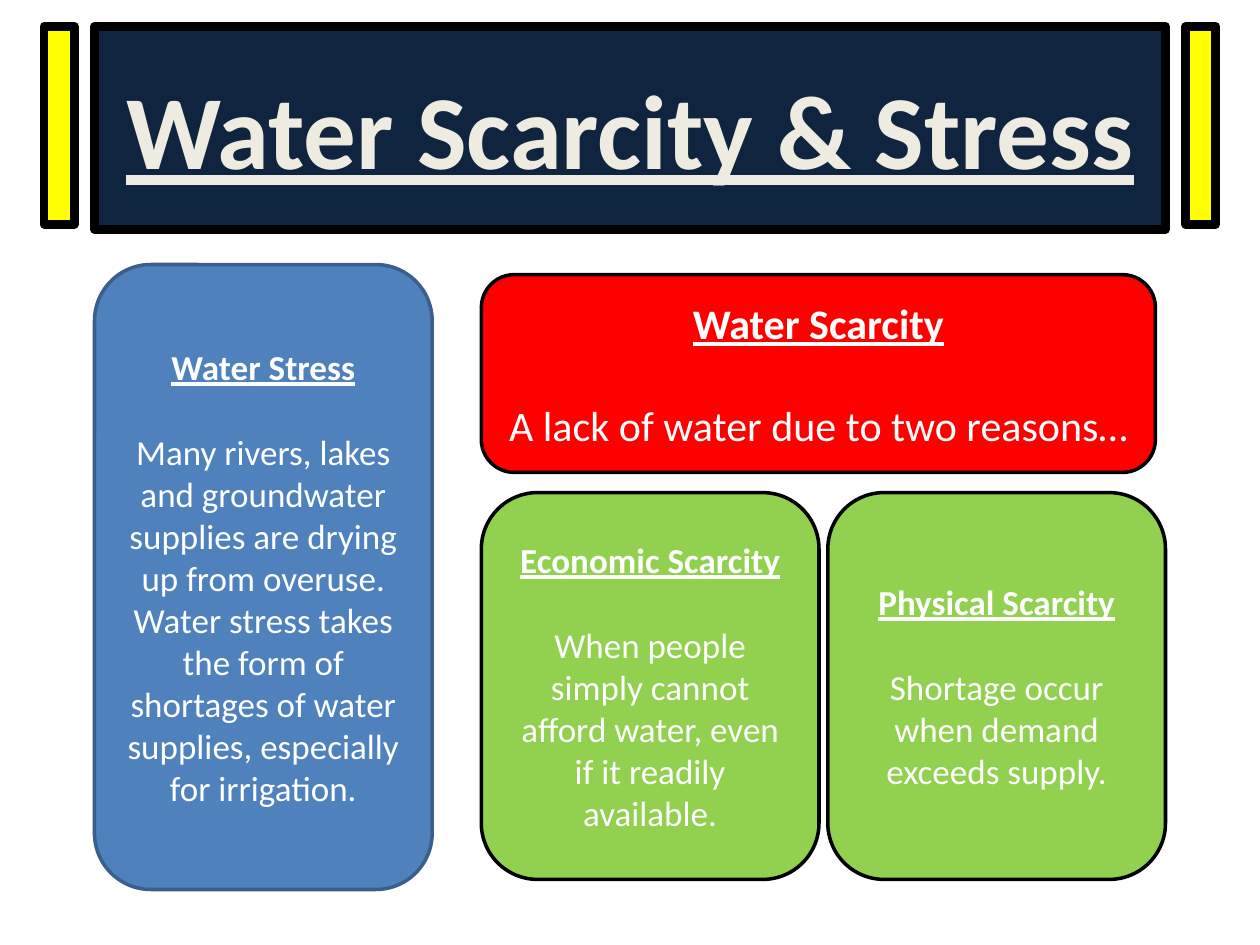
from pptx import Presentation
from pptx import util as u
from pptx.dml.color import RGBColor
from pptx.enum import shapes, text

Inches = u.Inches
NAVY = RGBColor(0x0F, 0x24, 0x3E)
CREAM = RGBColor(0xEE, 0xEC, 0xE1)
YELLOW = RGBColor(0xFF, 0xFF, 0x00)
BLUE = RGBColor(0x4F, 0x81, 0xBD)
STEEL = RGBColor(0x3A, 0x5F, 0x8C)
RED = RGBColor(0xFF, 0x00, 0x00)
GREEN = RGBColor(0x92, 0xD0, 0x50)
BLACK = RGBColor(0, 0, 0)
WHITE = RGBColor(0xFF, 0xFF, 0xFF)
FONT = "Calibri"
LEADING = 1.22


def paint(shape, fill, line, width):
    shape.fill.solid()
    shape.fill.fore_color.rgb = fill
    shape.line.color.rgb = line
    shape.line.width = u.Pt(width)


def style(para, size, color, strong):
    para.alignment = text.PP_ALIGN.CENTER
    for run in para.runs:
        font = run.font
        font.name = FONT
        font.size = u.Pt(size)
        font.color.rgb = color
        font.bold = font.underline = strong


def add_block(slide, kind, box, fill, line, width):
    shape = slide.shapes.add_shape(kind, *map(Inches, box))
    shape.shadow.inherit = False
    paint(shape, fill, line, width)
    return shape


def add_header(slide, box):
    left, top, width, height = box
    title = slide.shapes.title
    title.left, title.top, title.width, title.height = map(Inches, box)
    paint(title, NAVY, BLACK, 5)
    frame = title.text_frame
    frame.text = "Water Scarcity & Stress"
    frame.word_wrap = True
    frame.auto_size = text.MSO_AUTO_SIZE.NONE
    frame.vertical_anchor = text.MSO_ANCHOR.MIDDLE
    style(frame.paragraphs[0], 60, CREAM, True)
    bar, gap = 0.24, 0.16
    for x in (left - gap - bar, left + width + gap):
        add_block(slide, shapes.MSO_SHAPE.RECTANGLE,
                  (x, top, bar, height - 0.04), YELLOW, BLACK, 5)


def add_card(slide, box, head, body, fill, line=BLACK, size=20):
    card = add_block(slide, shapes.MSO_SHAPE.ROUNDED_RECTANGLE,
                     box, fill, line, 2)
    frame = card.text_frame
    frame.word_wrap = True
    frame.vertical_anchor = text.MSO_ANCHOR.MIDDLE
    first = frame.paragraphs[0]
    first.text = head
    style(first, size, WHITE, True)
    second = frame.add_paragraph()
    second.text = body
    second.space_before = u.Pt(round(size * LEADING, 1))
    style(second, size, WHITE, False)


def add_scarcity(slide, box):
    left, top, width, height = box
    add_card(slide, (left, top, width - 0.08, 1.57), "Water Scarcity",
             "A lack of water due to two reasons…", RED, size=24)
    card, low = 2.68, 3.07
    kinds = (
        ("Economic Scarcity", "When people simply cannot afford water, "
         "even if it readily available."),
        ("Physical Scarcity", "Shortage occur when demand exceeds supply."),
    )
    for i, (head, body) in enumerate(kinds):
        x = left + i * (width - card)
        add_card(slide, (x, top + height - low, card, low), head, body, GREEN)


def main():
    prs = Presentation()
    prs.slide_width, prs.slide_height = Inches(10), Inches(7.5)
    slide = prs.slides.add_slide(prs.slide_layouts[5])
    add_header(slide, (0.75, 0.21, 8.5, 1.61))
    add_card(slide, (0.75, 2.1, 2.68, 4.96), "Water Stress",
             "Many rivers, lakes and groundwater supplies are drying up from "
             "overuse. Water stress takes the form of shortages of water "
             "supplies, especially for irrigation.", BLUE, STEEL)
    add_scarcity(slide, (3.82, 2.18, 5.43, 4.8))
    prs.save("out.pptx")


if __name__ == "__main__":
    main()
